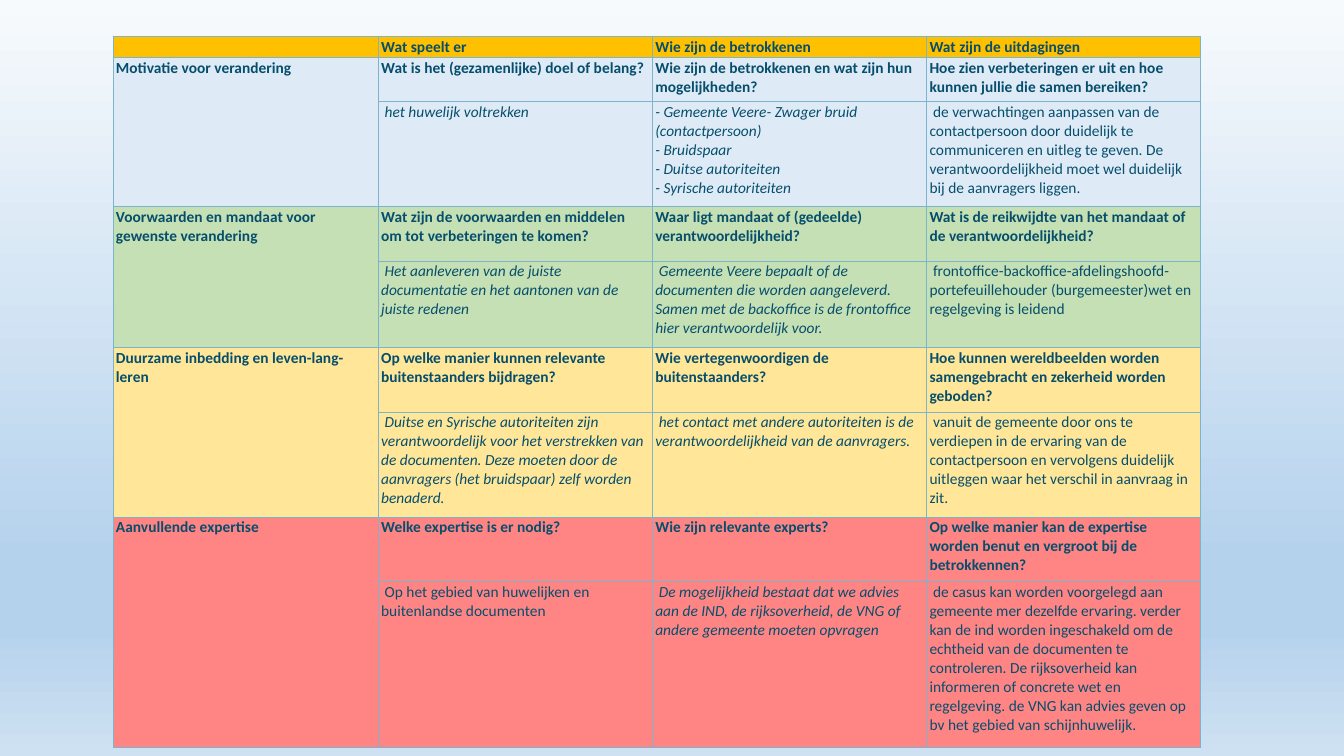
"""Build the slide with the table of change questions and answers."""
from dataclasses import dataclass
from itertools import product

from lxml.etree import SubElement
from pptx import Presentation
from pptx.dml.color import RGBColor as Color
from pptx.oxml.ns import qn
from pptx.util import Inches, Pt


@dataclass(frozen=True)
class Theme:
    """Colours, fonts and sizes of the slide."""
    font: str = "Calibri"
    size: float = 11
    ink: str = "064E6C"
    border: str = "7CB4CB"
    border_width: float = 0.5
    header: str = "FFC000"
    backdrop: tuple = ((0, "F7FAFD"), (74, "B5D2EC"), (83, "B5D2EC"), (100, "CEE1F2"))


@dataclass(frozen=True)
class Answer:
    """Text of an answer cell, one paragraph per line."""
    text: str
    italic: bool = True


@dataclass(frozen=True)
class Band:
    """One coloured topic with its questions and answers."""
    topic: str
    fill: str
    heights: tuple
    questions: tuple
    answers: tuple


THEME = Theme()
LEFT, TOP = 1.12, 0.36
COLUMN_WIDTHS = (2.63, 2.72, 2.72, 2.72)
HEADER_HEIGHT = 0.21
HEADERS = ("", "Wat speelt er", "Wie zijn de betrokkenen", "Wat zijn de uitdagingen")
MARGINS = {"margin_left": Inches(0.03), "margin_right": Inches(0.03),
           "margin_top": Inches(0.01), "margin_bottom": Inches(0.01)}
BANDS = (
    Band("Motivatie voor verandering", "DEEBF7", (0.44, 1.04),
         ("Wat is het (gezamenlijke) doel of belang?",
          "Wie zijn de betrokkenen en wat zijn hun mogelijkheden?",
          "Hoe zien verbeteringen er uit en hoe kunnen jullie die samen bereiken?"),
         (Answer(" het huwelijk voltrekken"),
          Answer("- Gemeente Veere- Zwager bruid (contactpersoon)\n- Bruidspaar\n"
                 "- Duitse autoriteiten\n- Syrische autoriteiten"),
          Answer(" de verwachtingen aanpassen van de contactpersoon door duidelijk te "
                 "communiceren en uitleg te geven. De verantwoordelijkheid moet wel "
                 "duidelijk bij de aanvragers liggen.", False))),
    Band("Voorwaarden en mandaat voor gewenste verandering", "C5E0B4", (0.54, 0.86),
         ("Wat zijn de voorwaarden en middelen om tot verbeteringen te komen?",
          "Waar ligt mandaat of (gedeelde) verantwoordelijkheid?",
          "Wat is de reikwijdte van het mandaat of de verantwoordelijkheid?"),
         (Answer(" Het aanleveren van de juiste documentatie en het aantonen van de "
                 "juiste redenen"),
          Answer(" Gemeente Veere bepaalt of de documenten die worden aangeleverd. "
                 "Samen met de backoffice is de frontoffice hier verantwoordelijk voor."),
          Answer(" frontoffice-backoffice-afdelingshoofd-portefeuillehouder "
                 "(burgemeester)wet en regelgeving is leidend", False))),
    Band("Duurzame inbedding en leven-lang-leren", "FFE699", (0.64, 1.04),
         ("Op welke manier kunnen relevante buitenstaanders bijdragen?",
          "Wie vertegenwoordigen de buitenstaanders?",
          "Hoe kunnen wereldbeelden worden samengebracht en zekerheid worden geboden?"),
         (Answer(" Duitse en Syrische autoriteiten zijn verantwoordelijk voor het "
                 "verstrekken van de documenten. Deze moeten door de aanvragers (het "
                 "bruidspaar) zelf worden benaderd."),
          Answer(" het contact met andere autoriteiten is de verantwoordelijkheid van "
                 "de aanvragers."),
          Answer(" vanuit de gemeente door ons te verdiepen in de ervaring van de "
                 "contactpersoon en vervolgens duidelijk uitleggen waar het verschil in "
                 "aanvraag in zit.", False))),
    Band("Aanvullende expertise", "FF8585", (0.64, 1.65),
         ("Welke expertise is er nodig?",
          "Wie zijn relevante experts?",
          "Op welke manier kan de expertise worden benut en vergroot bij de betrokkennen?"),
         (Answer(" Op het gebied van huwelijken en buitenlandse documenten", False),
          Answer(" De mogelijkheid bestaat dat we advies aan de IND, de rijksoverheid, "
                 "de VNG of andere gemeente moeten opvragen"),
          Answer(" de casus kan worden voorgelegd aan gemeente mer dezelfde ervaring. "
                 "verder kan de ind worden ingeschakeld om de echtheid van de documenten "
                 "te controleren. De rijksoverheid kan informeren of concrete wet en "
                 "regelgeving. de VNG kan advies geven op bv het gebied van "
                 "schijnhuwelijk.", False))),
)


def apply_format(target, values: dict) -> None:
    """Set each named attribute on the target."""
    for name, value in values.items():
        setattr(target, name, value)


def paint_backdrop(page) -> None:
    """Fill the page background with the vertical gradient."""
    fill = page.background.fill
    fill.gradient()
    fill.gradient_angle = 270
    stops = page.element.find(".//" + qn("a:gsLst"))
    for stop in list(stops):
        stops.remove(stop)
    for position, color in THEME.backdrop:
        stop = SubElement(stops, qn("a:gs"), pos=str(position * 1000))
        SubElement(stop, qn("a:srgbClr"), val=color)


def draw_borders(cell) -> None:
    """Give a cell the same thin line on all four sides."""
    properties = cell._tc.get_or_add_tcPr()
    for side in ("lnL", "lnR", "lnT", "lnB"):
        line = SubElement(properties, qn(f"a:{side}"), w=str(Pt(THEME.border_width)))
        solid = SubElement(line, qn("a:solidFill"))
        SubElement(solid, qn("a:srgbClr"), val=THEME.border)


def fill_cell(cell, text: str, fill: str, bold: bool = True, italic: bool = False) -> None:
    """Write and style one table cell."""
    draw_borders(cell)
    cell.fill.solid()
    cell.fill.fore_color.rgb = Color.from_string(fill)
    apply_format(cell, MARGINS)
    cell.text = text
    for para in cell.text_frame.paragraphs:
        for font in (para.font, *(span.font for span in para.runs)):
            apply_format(font, {"name": THEME.font, "size": Pt(THEME.size),
                                "bold": bold, "italic": italic})
            font.color.rgb = Color.from_string(THEME.ink)


def fill_band(table, top_row: int, band: Band) -> None:
    """Write a topic with its question row and answer row."""
    topic, below = table.cell(top_row, 0), table.cell(top_row + 1, 0)
    fill_cell(topic, band.topic, band.fill)
    fill_cell(below, "", band.fill)
    topic.merge(below)
    for column, (question, answer) in enumerate(zip(band.questions, band.answers), 1):
        fill_cell(table.cell(top_row, column), question, band.fill)
        fill_cell(table.cell(top_row + 1, column), answer.text, band.fill,
                  bold=False, italic=answer.italic)


def draw_table(page) -> None:
    """Add the table with its header and coloured bands."""
    heights = (HEADER_HEIGHT, *(height for band in BANDS for height in band.heights))
    table = page.shapes.add_table(
        len(heights), len(COLUMN_WIDTHS), Inches(LEFT), Inches(TOP),
        Inches(sum(COLUMN_WIDTHS)), Inches(sum(heights))).table
    apply_format(table, {"first_row": False, "horz_banding": False})
    for column, width in zip(table.columns, COLUMN_WIDTHS):
        column.width = Inches(width)
    for row, height in zip(table.rows, heights):
        row.height = Inches(height)
    for column, header in enumerate(HEADERS):
        fill_cell(table.cell(0, column), header, THEME.header)
    for index, band in enumerate(BANDS):
        fill_band(table, 1 + 2 * index, band)


def main() -> None:
    """Build and save the deck."""
    deck = Presentation()
    apply_format(deck, {"slide_width": Inches(13.33), "slide_height": Inches(7.5)})
    page = deck.slides.add_slide(deck.slide_layouts[6])
    paint_backdrop(page)
    draw_table(page)
    deck.save("out.pptx")


if __name__ == "__main__":
    main()
